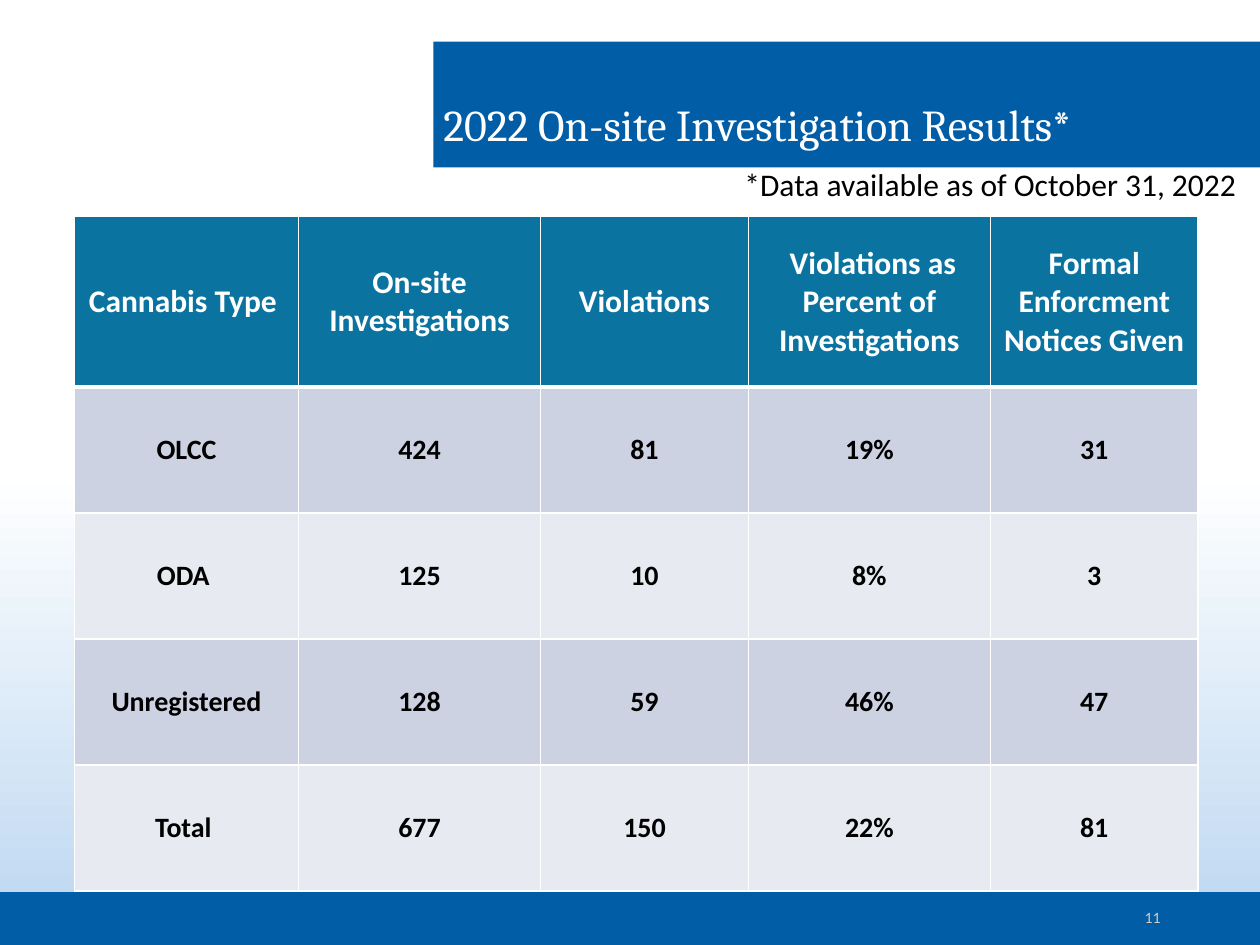
import lxml.etree
import pptx
import pptx.dml.color
import pptx.enum.shapes
import pptx.enum.text
import pptx.oxml.ns
import pptx.util
from dataclasses import dataclass

Inches = pptx.util.Inches
Pt = pptx.util.Pt
ALIGN = pptx.enum.text.PP_ALIGN
ANCHOR = pptx.enum.text.MSO_ANCHOR

TITLE = "2022 On-site Investigation Results*"
DATA_NOTE = "*Data available as of October 31, 2022 "
PAGE_NUMBER = "11"
RESULTS = [
    ("Cannabis Type ", "On-site Investigations", "Violations",
     " Violations as Percent of Investigations", "Formal Enforcment Notices Given"),
    ("OLCC", "424", "81", "19%", "31"),
    ("ODA ", "125", "10", "8%", "3"),
    ("Unregistered", "128", "59", "46%", "47"),
    ("Total ", "677", "150", "22%", "81"),
]
COL_WIDTHS = (1.78, 1.92, 1.65, 1.92, 1.65)
HEADER_HEIGHT, ROW_HEIGHT = 1.35, 1
BANDS = [(0, 7.08, 10, 0.42), (3.44, 0.33, 6.56, 1)]


@dataclass(frozen=True)
class Theme:
    heading: str = "Cambria"
    body: str = "Calibri"
    white: str = "FFFFFF"
    black: str = "000000"
    sky: str = "BBD6F0"
    band: str = "005DA6"
    header: str = "0B73A0"
    stripes: tuple = ("CCD2E1", "E7EAF1")
    page: str = "D3CCBD"
    title_size: float = 25.2
    large_size: float = 18
    cell_size: float = 16
    page_size: float = 9
    rule: float = 1
    header_rule: float = 3


THEME = Theme()


def rgb(value):
    return pptx.dml.color.RGBColor.from_string(value)


def add_run(p, text, size, color, font=THEME.body, bold=False):
    r = p.add_run()
    r.text = text
    r.font.name = font
    r.font.size = Pt(size)
    r.font.bold = bold
    r.font.color.rgb = rgb(color)


def add_text(s, box, text, size, color, font=THEME.body, anchor=ANCHOR.TOP,
             align=ALIGN.LEFT, spacing=None):
    sp = s.shapes.add_textbox(*map(Inches, box))
    tf = sp.text_frame
    tf.word_wrap = True
    tf.vertical_anchor = anchor
    p = tf.paragraphs[0]
    p.alignment = align
    p.line_spacing = spacing
    add_run(p, text, size, color, font)


def add_band(s, box):
    sp = s.shapes.add_shape(pptx.enum.shapes.MSO_SHAPE.RECTANGLE, *map(Inches, box))
    sp.shadow.inherit = False
    sp.fill.solid()
    sp.fill.fore_color.rgb = rgb(THEME.band)
    sp.line.fill.background()


def set_borders(cell, widths):
    qn = pptx.oxml.ns.qn
    tc_pr = cell._tc.get_or_add_tcPr()
    for side, width in widths.items():
        ln = lxml.etree.SubElement(tc_pr, qn(f"a:ln{side}"), w=str(Pt(width)))
        fill = lxml.etree.SubElement(ln, qn("a:solidFill"))
        lxml.etree.SubElement(fill, qn("a:srgbClr"), val=THEME.white)


def add_results(s, left, top):
    heights = [HEADER_HEIGHT] + [ROW_HEIGHT] * (len(RESULTS) - 1)
    box = (left, top, sum(COL_WIDTHS), sum(heights))
    table = s.shapes.add_table(len(RESULTS), len(COL_WIDTHS), *map(Inches, box)).table
    for column, width in zip(table.columns, COL_WIDTHS):
        column.width = Inches(width)
    for i, (values, height) in enumerate(zip(RESULTS, heights)):
        table.rows[i].height = Inches(height)
        is_header = i == 0
        fill = THEME.header if is_header else THEME.stripes[(i - 1) % 2]
        size = THEME.large_size if is_header else THEME.cell_size
        color = THEME.white if is_header else THEME.black
        widths = {"L": THEME.rule, "R": THEME.rule,
                  "T": THEME.header_rule if i == 1 else THEME.rule,
                  "B": THEME.header_rule if is_header else THEME.rule}
        for j, text in enumerate(values):
            cell = table.cell(i, j)
            set_borders(cell, widths)
            cell.fill.solid()
            cell.fill.fore_color.rgb = rgb(fill)
            cell.vertical_anchor = ANCHOR.MIDDLE
            p = cell.text_frame.paragraphs[0]
            p.alignment = ALIGN.CENTER
            add_run(p, text, size, color, bold=True)


def set_background(s):
    fill = s.background.fill
    fill.gradient()
    fill.gradient_angle = 270
    stops = ((0.5, THEME.white), (1, THEME.sky))
    for stop, (position, color) in zip(fill.gradient_stops, stops):
        stop.position = position
        stop.color.rgb = rgb(color)


def main():
    """Build the investigation results slide."""
    prs = pptx.Presentation()
    prs.slide_width, prs.slide_height = Inches(10), Inches(7.5)
    s = prs.slides.add_slide(prs.slide_layouts[6])
    set_background(s)
    for box in BANDS:
        add_band(s, box)
    add_text(s, (3.42, 0.42, 6.25, 0.83), TITLE, THEME.title_size, THEME.white,
             THEME.heading, ANCHOR.BOTTOM, spacing=0.9)
    add_text(s, (7.06, 7.08, 2.25, 0.4), PAGE_NUMBER, THEME.page_size, THEME.page,
             anchor=ANCHOR.MIDDLE, align=ALIGN.RIGHT)
    add_results(s, 0.59, 1.72)
    add_text(s, (5.81, 1.26, 4.19, 0.4), DATA_NOTE, THEME.large_size, THEME.black)
    prs.save("out.pptx")


if __name__ == "__main__":
    main()
